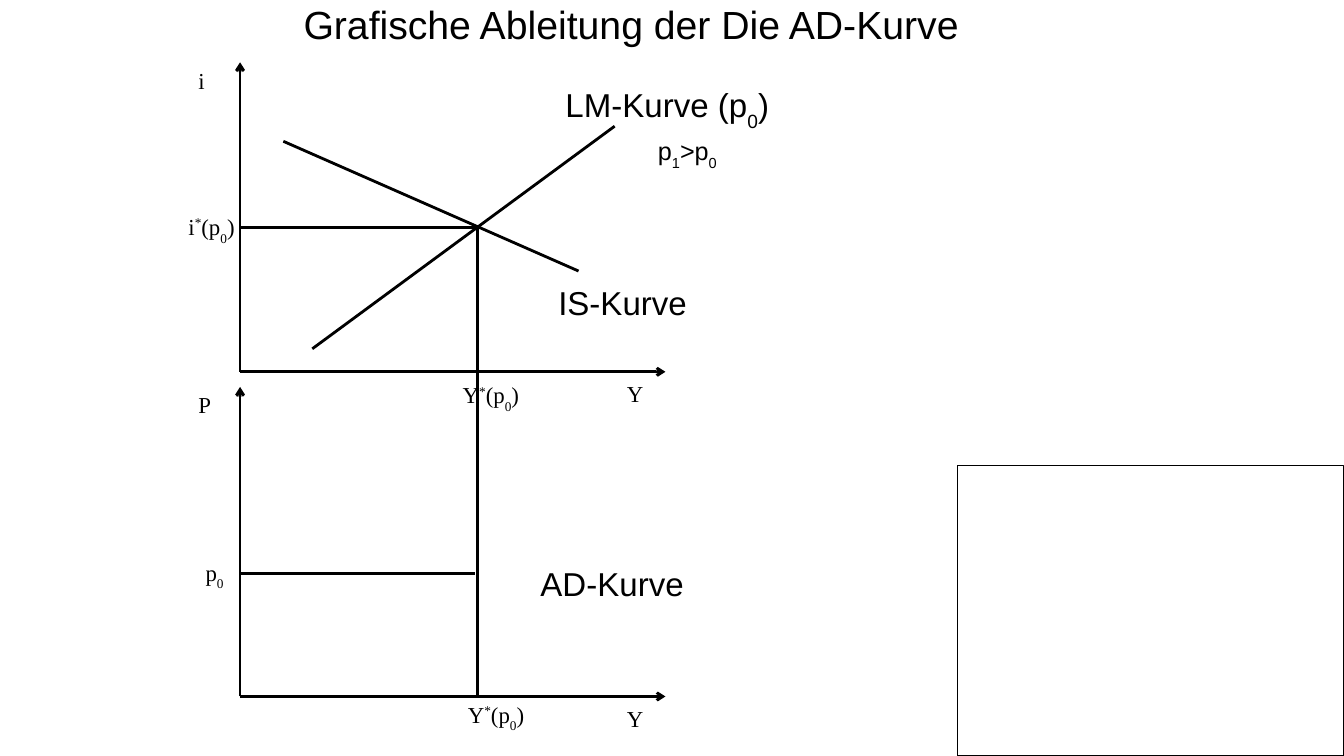
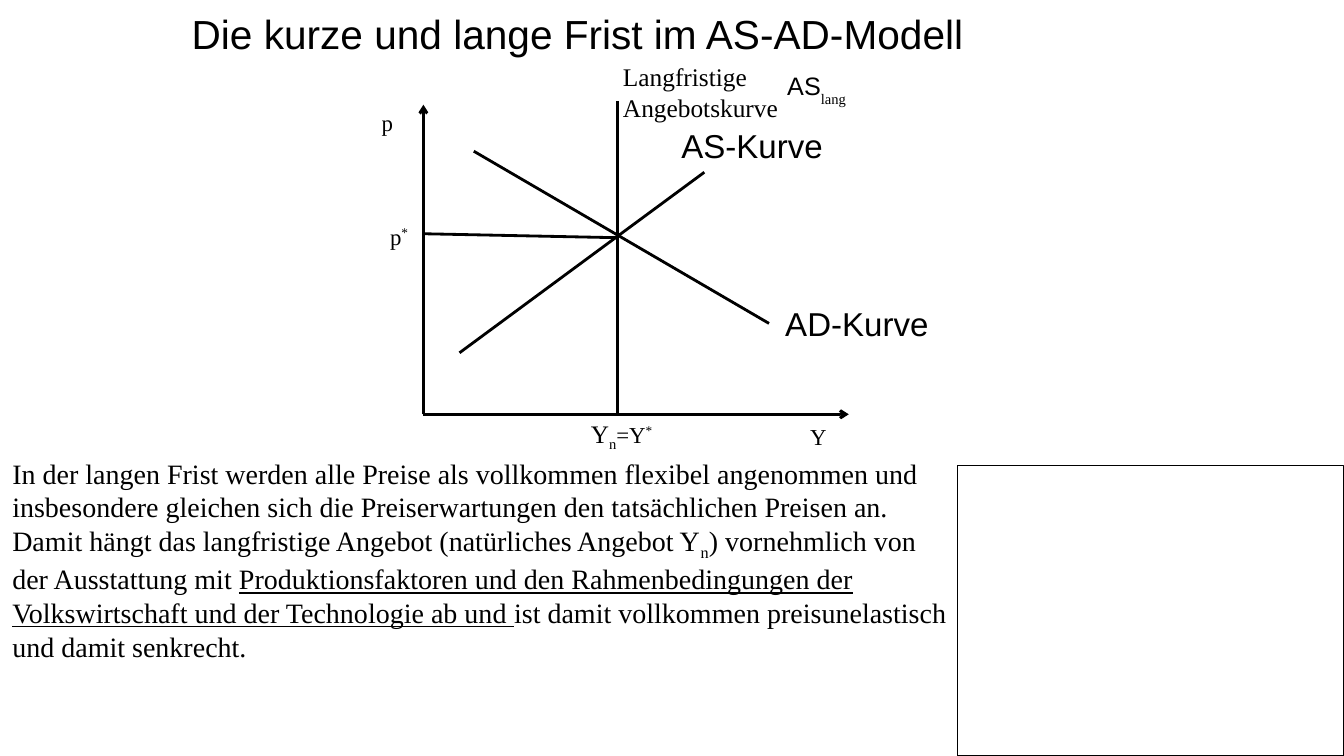
import pptx
import pptx.dml.color
import pptx.enum.shapes
import pptx.enum.text
import pptx.oxml
import pptx.oxml.ns
import pptx.util
from pptx.util import Cm

BLACK = pptx.dml.color.RGBColor.from_string("000000")
SANS, SERIF = "Arial", "Times New Roman"
SYMBOL_SIZE, CURVE_SIZE = 16.3, 23.6
SYMBOL_HEIGHT, CURVE_HEIGHT = 0.89, 1.19
SUB_0, STAR = ("0", -33), ("*", 33)
AT_P0 = [STAR, "(p", SUB_0, ")"]


def add_text(slide, left, top, width, height, paragraphs, size, font, wrap=False):
    """Add a text box; a piece is a string or (string, baseline shift in percent)."""
    frame = slide.shapes.add_textbox(Cm(left), Cm(top), Cm(width), Cm(height)).text_frame
    frame.margin_left = frame.margin_right = Cm(0.23)
    frame.margin_top = frame.margin_bottom = Cm(0.1)
    frame.word_wrap = wrap
    if not wrap:
        frame.auto_size = pptx.enum.text.MSO_AUTO_SIZE.SHAPE_TO_FIT_TEXT
    for number, pieces in enumerate(paragraphs):
        paragraph = frame.add_paragraph() if number else frame.paragraphs[0]
        paragraph.font.size = pptx.util.Pt(size)
        paragraph.font.name = font
        paragraph.font.color.rgb = BLACK
        for piece in pieces:
            words, shift = (piece, 0) if isinstance(piece, str) else piece
            run = paragraph.add_run()
            run.text = words
            if shift:
                run._r.get_or_add_rPr().set("baseline", str(shift * 1000))
    return frame


def add_line(slide, x1, y1, x2, y2, arrow=False):
    line = slide.shapes.add_connector(
        pptx.enum.shapes.MSO_CONNECTOR.STRAIGHT, Cm(x1), Cm(y1), Cm(x2), Cm(y2))
    line.line.color.rgb = BLACK
    line.line.width = 0
    if arrow:
        head = pptx.oxml.parse_xml(f'<a:tailEnd {pptx.oxml.ns.nsdecls("a")} type="arrow"/>')
        line.line._get_or_add_ln().append(head)
    line._element.spPr.append(
        pptx.oxml.parse_xml(f'<a:effectLst {pptx.oxml.ns.nsdecls("a")}/>'))


deck = pptx.Presentation()
deck.slide_width, deck.slide_height = Cm(33.87), Cm(19.05)
derivation, long_run = [deck.slides.add_slide(deck.slide_layouts[6]) for _ in range(2)]

# Titles and the empty frame at the lower right
for slide, title, left, top, width, size in [
    (derivation, "Grafische Ableitung der Die AD-Kurve", 7.42, -0.1, 23.39, 28),
    (long_run, "Die kurze und lange Frist im AS-AD-Modell", 4.6, 0.13, 23.39, 29),
]:
    add_text(slide, left, top, width, 1.4, [[title]], size, SANS, wrap=True)
    frame = slide.shapes.add_shape(
        pptx.enum.shapes.MSO_SHAPE.RECTANGLE, Cm(24.13), Cm(11.73), Cm(9.73), Cm(7.32))
    frame.shadow.inherit = False
    frame.fill.background()
    frame.line.color.rgb = BLACK
    frame.line.width = pptx.util.Pt(1)

# Axes with their names, placed from the origin of each diagram
AXIS_HEIGHT, AXIS_WIDTH = 7.8, 10.72
for slide, x, y, name, name_width in [
    (derivation, 6.05, 9.37, "i", 0.61),
    (derivation, 6.05, 17.55, "P", 0.79),
    (long_run, 10.67, 10.44, "p", 0.74),
]:
    add_line(slide, x, y, x, y - AXIS_HEIGHT, arrow=True)
    add_line(slide, x, y, x + AXIS_WIDTH, y, arrow=True)
    add_text(slide, x - 1.28, y - AXIS_HEIGHT, name_width, SYMBOL_HEIGHT,
             [[name]], SYMBOL_SIZE, SERIF)
    add_text(slide, x + 9.52, y + 0.1, 0.89, SYMBOL_HEIGHT, [["Y"]], SYMBOL_SIZE, SERIF)

# Curves and guide lines
for slide, *ends in [
    (derivation, 7.87, 8.79, 15.49, 3.18),
    (derivation, 7.14, 3.56, 14.58, 6.83),
    (derivation, 12.04, 5.74, 12.04, 17.55),
    (derivation, 11.96, 5.74, 6.05, 5.74),
    (derivation, 11.96, 14.45, 6.05, 14.45),
    (long_run, 11.58, 8.89, 17.75, 4.34),
    (long_run, 19.38, 8.15, 11.94, 3.81),
    (long_run, 15.57, 5.99, 10.67, 5.89),
    (long_run, 15.57, 2.54, 15.57, 10.44),
]:
    add_line(slide, *ends)

# Curve names
for slide, left, top, width, pieces in [
    (derivation, 14.02, 2.03, 5.66, ["LM-Kurve (p", SUB_0, ")"]),
    (derivation, 13.84, 7.01, 3.73, ["IS-Kurve"]),
    (derivation, 13.39, 14.1, 4.09, ["AD-Kurve"]),
    (long_run, 16.94, 3.07, 4.06, ["AS-Kurve"]),
    (long_run, 19.56, 7.54, 4.09, ["AD-Kurve"]),
]:
    add_text(slide, left, top, width, CURVE_HEIGHT, [pieces], CURVE_SIZE, SANS)

# Equilibrium values on the axes
for slide, left, top, width, pieces in [
    (derivation, 4.52, 5.26, 1.68, ["i", *AT_P0]),
    (derivation, 11.43, 9.5, 1.96, ["Y", *AT_P0]),
    (derivation, 11.56, 17.55, 1.96, ["Y", *AT_P0]),
    (derivation, 4.95, 13.97, 0.94, ["p", SUB_0]),
    (long_run, 9.6, 5.51, 0.94, ["p", STAR]),
]:
    add_text(slide, left, top, width, SYMBOL_HEIGHT, [pieces], SYMBOL_SIZE, SERIF)

add_text(derivation, 16.35, 3.3, 2.16, 1.04,
         [["p", ("1", -33), ">p", SUB_0]], 18, SANS, wrap=True)

natural_output = add_text(long_run, 14.66, 10.44, 2.08, 0.97,
                          [["Y", ("n", -25), "=Y", STAR]], SYMBOL_SIZE, SERIF)
for run in natural_output.paragraphs[0].runs[:2]:
    run.font.size = pptx.util.Pt(18)

add_text(long_run, 15.47, 1.45, 4.39, 1.73,
         [["Langfristige"], ["Angebotskurve"]], 18.1, SERIF)
long_supply = add_text(long_run, 19.61, 1.68, 2.06, 0.97, [["AS", ("lang", -33)]], 18, SANS)
long_supply.paragraphs[0].runs[1].font.name = SERIF

explanation = add_text(long_run, 0.08, 11.4, 24.08, 5.89, [[
    "In der langen Frist werden alle Preise als vollkommen flexibel angenommen und "
    "insbesondere gleichen sich die Preiserwartungen den tatsächlichen Preisen an. "
    "Damit hängt das langfristige Angebot (natürliches Angebot Y",
    ("n", -25),
    ") vornehmlich von der Ausstattung mit ",
    "Produktionsfaktoren und den Rahmenbedingungen der Volkswirtschaft "
    "und der Technologie ab und ",
    "ist damit vollkommen preisunelastisch und damit senkrecht.",
]], 20, SERIF, wrap=True)
explanation.paragraphs[0].runs[3].font.underline = True

deck.save("out.pptx")
